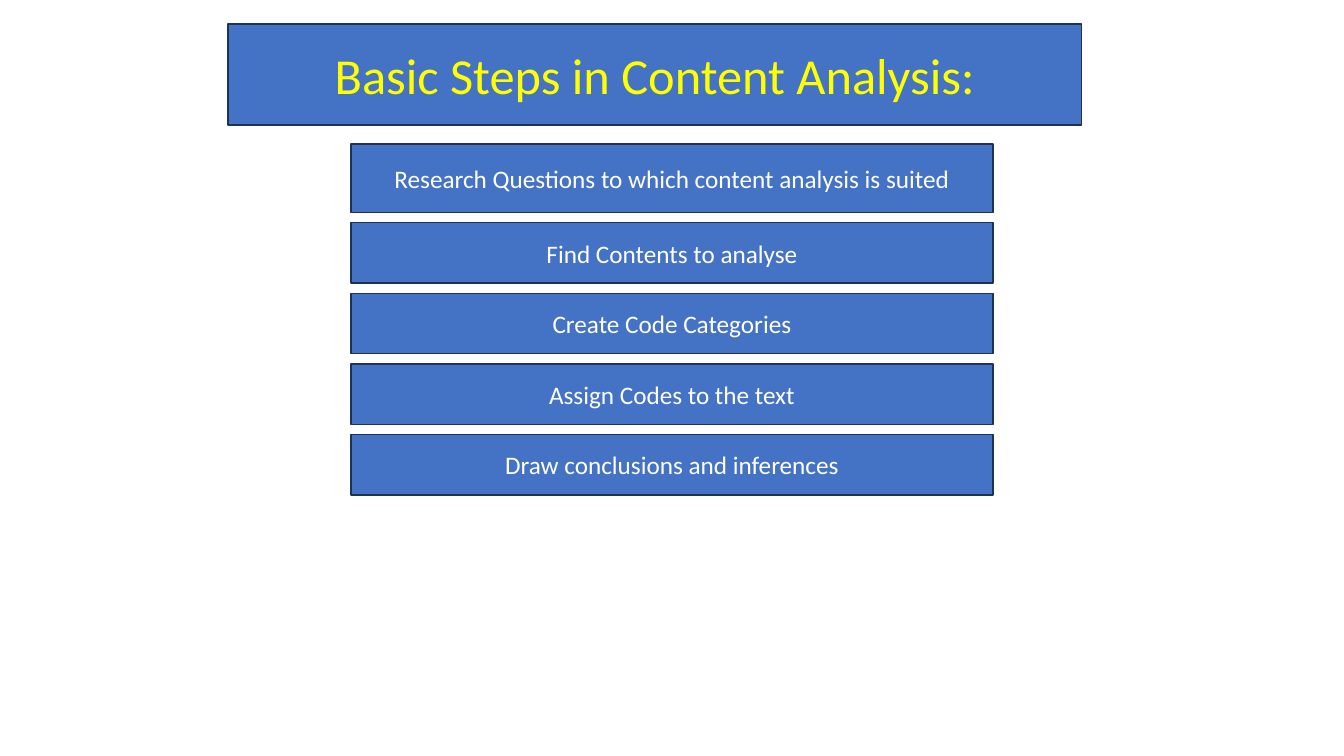
from pptx import Presentation
from pptx.dml.color import RGBColor
from pptx.enum.shapes import MSO_SHAPE
from pptx.enum.text import MSO_ANCHOR, PP_ALIGN
from pptx.util import Inches, Pt

TITLE = "Basic Steps in Content Analysis:"
STEPS = [
    ("Research Questions to which content analysis is suited", 0.68),
    ("Find Contents to analyse", 0.6),
    ("Create Code Categories", 0.6),
    ("Assign Codes to the text", 0.6),
    ("Draw conclusions and inferences", 0.6),
]
BLUE, NAVY, YELLOW, WHITE = "4472C4", "1E3256", "FFFF00", "FFFFFF"
STEP_LEFT, STEP_WIDTH, STEPS_TOP, GAP = 3.48, 6.37, 1.43, 0.1


def paint(color_format, color):
    color_format.rgb = RGBColor.from_string(color)


def add_box(slide, text, left, top, width, height, size, color):
    box = slide.shapes.add_shape(
        MSO_SHAPE.RECTANGLE, Inches(left), Inches(top), Inches(width), Inches(height)
    )
    box.shadow.inherit = False
    box.fill.solid()
    paint(box.fill.fore_color, BLUE)
    paint(box.line.color, NAVY)
    box.line.width = Pt(1)

    frame = box.text_frame
    frame.text = text
    frame.word_wrap = True
    frame.vertical_anchor = MSO_ANCHOR.MIDDLE
    para = frame.paragraphs[0]
    para.alignment = PP_ALIGN.CENTER
    font = para.runs[0].font
    font.name = "Calibri"
    font.size = Pt(size)
    paint(font.color, color)


def main():
    deck = Presentation()
    deck.slide_width, deck.slide_height = Inches(13.33), Inches(7.5)
    page = deck.slides.add_slide(deck.slide_layouts[6])

    add_box(page, TITLE, 2.26, 0.24, 8.47, 1, 36, YELLOW)
    top = STEPS_TOP
    for step, height in STEPS:
        add_box(page, step, STEP_LEFT, top, STEP_WIDTH, height, 18, WHITE)
        top += height + GAP

    deck.save("out.pptx")


if __name__ == "__main__":
    main()
